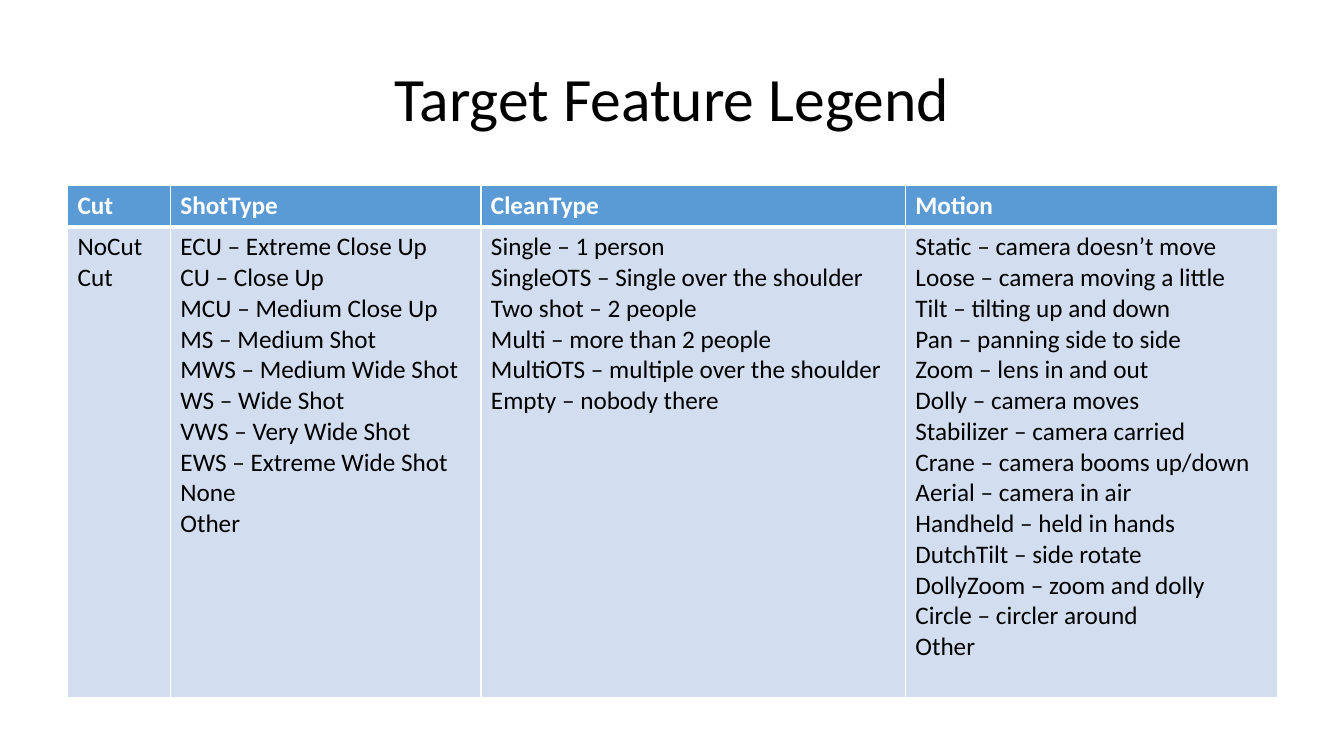
from lxml import etree
from pptx import Presentation
from pptx.dml.color import RGBColor
from pptx.enum.text import MSO_ANCHOR, PP_ALIGN
from pptx.oxml.ns import qn
from pptx.util import Inches, Pt

TOP, CENTER = MSO_ANCHOR.TOP, PP_ALIGN.CENTER
FONT = "Calibri"
COLORS = {"header": "5B9BD5", "body": "D2DEEF", "white": "FFFFFF", "black": "000000"}

TITLE = "Target Feature Legend"
# heading, column width in inches, entries
FEATURES = [
    ("Cut", 1.02, ["NoCut", "Cut"]),
    ("ShotType", 3.08, [
        "ECU – Extreme Close Up",
        "CU – Close Up",
        "MCU – Medium Close Up",
        "MS – Medium Shot",
        "MWS – Medium Wide Shot",
        "WS – Wide Shot",
        "VWS – Very Wide Shot",
        "EWS – Extreme Wide Shot",
        "None",
        "Other",
    ]),
    ("CleanType", 4.21, [
        "Single – 1 person",
        "SingleOTS – Single over the shoulder",
        "Two shot – 2 people",
        "Multi – more than 2 people",
        "MultiOTS – multiple over the shoulder",
        "Empty – nobody there",
    ]),
    ("Motion", 3.69, [
        "Static – camera doesn’t move",
        "Loose – camera moving a little",
        "Tilt – tilting up and down",
        "Pan – panning side to side",
        "Zoom – lens in and out",
        "Dolly – camera moves",
        "Stabilizer – camera carried",
        "Crane – camera booms up/down",
        "Aerial – camera in air",
        "Handheld – held in hands",
        "DutchTilt – side rotate",
        "DollyZoom – zoom and dolly",
        "Circle – circler around",
        "Other",
    ]),
]
ROW_HEIGHTS = [0.41, 4.67]


def style_text(frame, size, color, bold=False):
    for para in frame.paragraphs:
        for span in para.runs:
            span.font.name = FONT
            span.font.size = Pt(size)
            span.font.bold = bold
            span.font.color.rgb = RGBColor.from_string(COLORS[color])


def set_borders(cell, widths):
    """Draw white borders; widths maps a:ln* side letters to points."""
    properties = cell._tc.get_or_add_tcPr()
    for position, (side, width) in enumerate(widths.items()):
        line = etree.Element(qn(f"a:ln{side}"), w=str(Pt(width)))
        fill = etree.SubElement(line, qn("a:solidFill"))
        etree.SubElement(fill, qn("a:srgbClr"), val=COLORS["white"])
        properties.insert(position, line)


def fill_cell(cell, lines, fill, color, bold, borders):
    cell.text_frame.text = "\n".join(lines)
    cell.vertical_anchor = TOP
    style_text(cell.text_frame, 18, color, bold)
    cell.fill.solid()
    cell.fill.fore_color.rgb = RGBColor.from_string(COLORS[fill])
    set_borders(cell, borders)


def add_title(page):
    box = page.shapes.add_textbox(Inches(3.81), Inches(0.55), Inches(5.71), Inches(0.84))
    box.text_frame.word_wrap = False
    box.text_frame.text = TITLE
    box.text_frame.paragraphs[0].alignment = CENTER
    style_text(box.text_frame, 44, "black")


def add_legend(page):
    width = sum(feature[1] for feature in FEATURES)
    table = page.shapes.add_table(
        len(ROW_HEIGHTS), len(FEATURES), Inches(0.67), Inches(1.84),
        Inches(width), Inches(sum(ROW_HEIGHTS))).table
    for row, height in zip(table.rows, ROW_HEIGHTS):
        row.height = Inches(height)
    for index, (heading, column_width, entries) in enumerate(FEATURES):
        table.columns[index].width = Inches(column_width)
        fill_cell(table.cell(0, index), [heading], "header", "white", True,
                  {"L": 1, "R": 1, "T": 1, "B": 3})
        fill_cell(table.cell(1, index), entries, "body", "black", False,
                  {"L": 1, "R": 1, "T": 3, "B": 1})


def main():
    deck = Presentation()
    deck.slide_width, deck.slide_height = Inches(13.33), Inches(7.5)
    page = deck.slides.add_slide(deck.slide_layouts[6])
    add_legend(page)
    add_title(page)
    deck.save("out.pptx")


if __name__ == "__main__":
    main()
